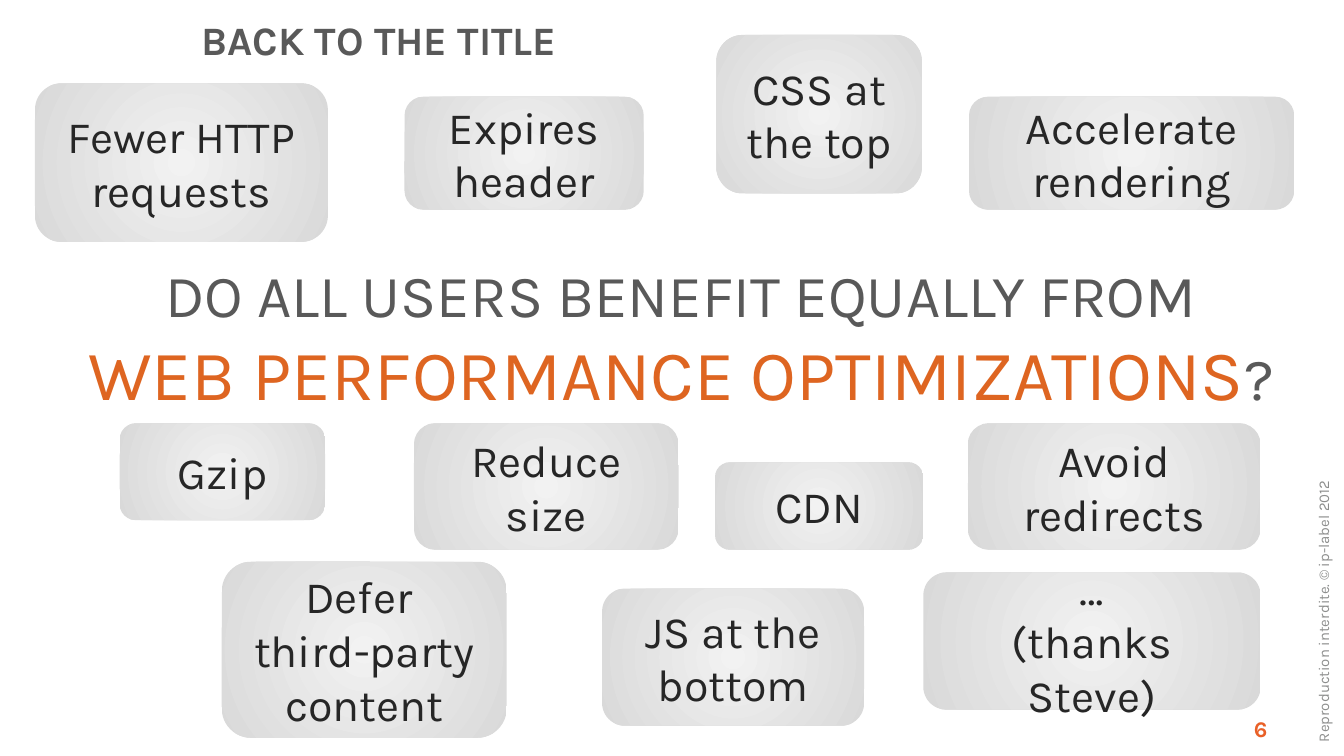
"""Build a slide that sets a question among labels for web speed-ups."""
from pptx import Presentation, util as u
from pptx.dml.color import RGBColor
from pptx.enum import shapes, text
from pptx.oxml import parse_xml
from pptx.oxml.ns import nsdecls, qn

deck = Presentation()
deck.slide_width = u.Inches(10)
deck.slide_height = deck.slide_width * 9 // 16
UNIT = deck.slide_width / 100
GREY, ORANGE = "595959", "DE6521"
page = deck.slides.add_slide(deck.slide_layouts[6])


def tint(hue):
    return RGBColor.from_string(hue)


def write(lines, *grid, card=False, size=24, hue="262626", bold=False,
          align="CENTER", anchor="MIDDLE", pad=(1, 0.5, 1, 0.5)):
    area = [round(n * UNIT) for n in grid]
    if card:
        shape = page.shapes.add_shape(shapes.MSO_SHAPE.ROUNDED_RECTANGLE, *area)
    else:
        shape = page.shapes.add_textbox(*area)
    frame = shape.text_frame
    frame.word_wrap = True
    frame.vertical_anchor = text.MSO_ANCHOR[anchor]
    (frame.margin_left, frame.margin_top, frame.margin_right,
     frame.margin_bottom) = [round(n * UNIT) for n in pad]
    for i, line in enumerate(lines):
        par = frame.add_paragraph() if i else frame.paragraphs[0]
        par.alignment = text.PP_ALIGN[align]
        runs = [(line, size, hue)] if isinstance(line, str) else line
        for words, points, shade in runs:
            run = par.add_run()
            run.text = words
            run.font.name, run.font.size, run.font.bold = "Karla", u.Pt(points), bold
            run.font.color.rgb = tint(shade)
    return shape


write(["6"], 91.1, 51.9, 10.2, 4, size=12, hue="E96027", bold=True,
      align="LEFT", anchor="TOP", pad=(2.2, 1.3, 0, 0))
note = write(["Reproduction interdite. © ip-label 2012"], 79.1, 35.6, 38.8, 2.4,
             size=8, hue="8D8E8D", align="LEFT", anchor="TOP")
note.rotation = 270
write(["BACK TO THE TITLE"], 2.6, 0.6, 42.6, 4.7, size=21.6, hue=GREY,
      bold=True, align="LEFT", pad=(12.4, 0.5, 1, 0.5))
write(["DO ALL USERS BENEFIT EQUALLY FROM",
       [("WEB PERFORMANCE OPTIMIZATIONS", 38, ORANGE), ("?", 32, GREY)]],
      6.2, 19.4, 89, 11.2, size=32, hue=GREY, pad=(0, 0.5, 0, 0.5))

cards = [
    (["Fewer HTTP requests"], 2.6, 6.2, 21.8, 11.8),
    (["Expires header"], 30.1, 7.2, 17.8, 8.4),
    (["CSS at the top"], 53.3, 2.6, 15.3, 11.8),
    (["Accelerate rendering"], 72.1, 7.2, 24.2, 8.4),
    (["CDN"], 53.2, 34.4, 15.5, 6.5),
    (["Gzip"], 8.9, 31.5, 15.3, 7.2),
    (["JS at the bottom"], 44.8, 43.8, 19.5, 10.2),
    (["Reduce size"], 30.8, 31.5, 19.7, 9.4),
    (["…", "(thanks Steve)"], 68.7, 42.6, 25.1, 10.2),
    (["Defer ", "third-party content"], 16.5, 41.8, 21.2, 13.1),
    (["Avoid redirects"], 72, 31.5, 21.8, 9.4),
]
for lines, *grid in cards:
    card = write(lines, *grid, card=True)
    card.shadow.inherit = False
    card.line.fill.background()
    card.fill.gradient()
    for stop, hue in zip(card.fill.gradient_stops, ("F2F2F2", "D9D9D9")):
        stop.color.rgb = tint(hue)
    ramp = card.element.spPr.find(qn("a:gradFill"))
    ramp.replace(ramp.find(qn("a:lin")), parse_xml(
        f'<a:path {nsdecls("a")} path="circle">'
        '<a:fillToRect l="50000" t="50000" r="50000" b="50000"/></a:path>'))

deck.save("out.pptx")
